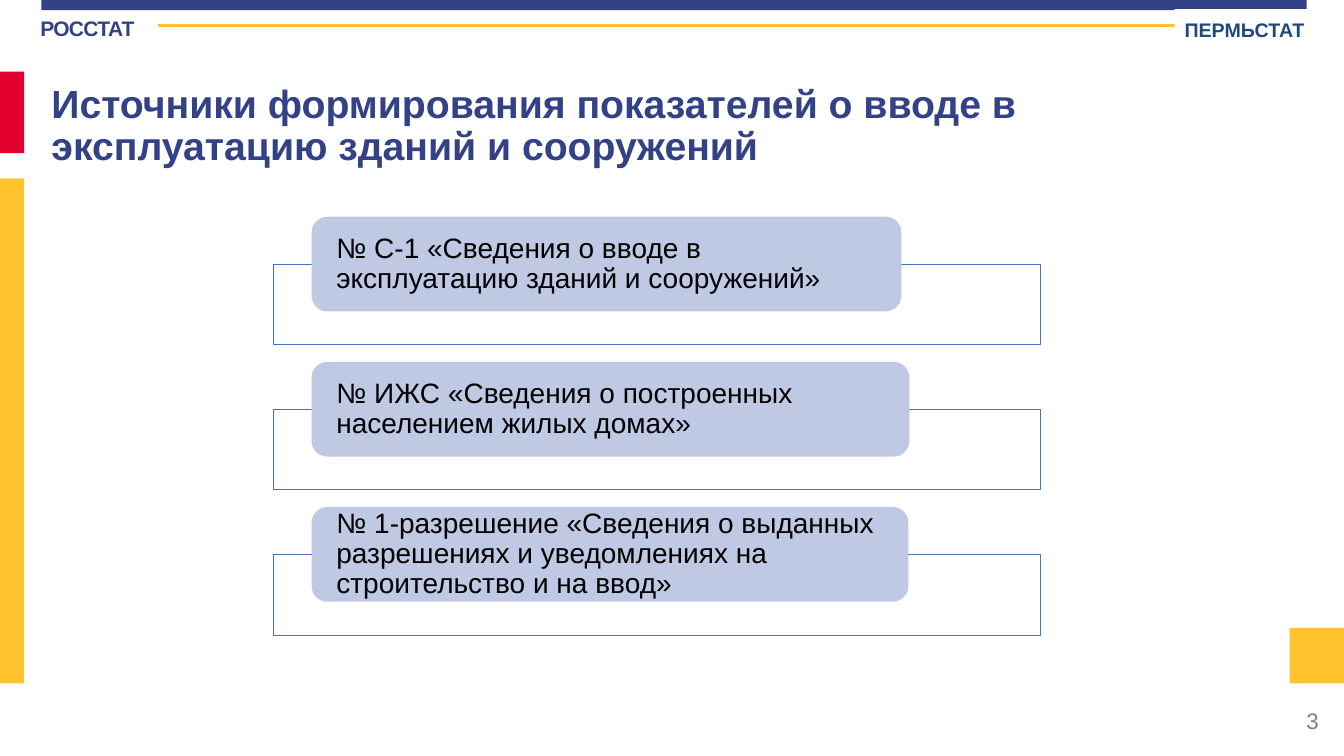
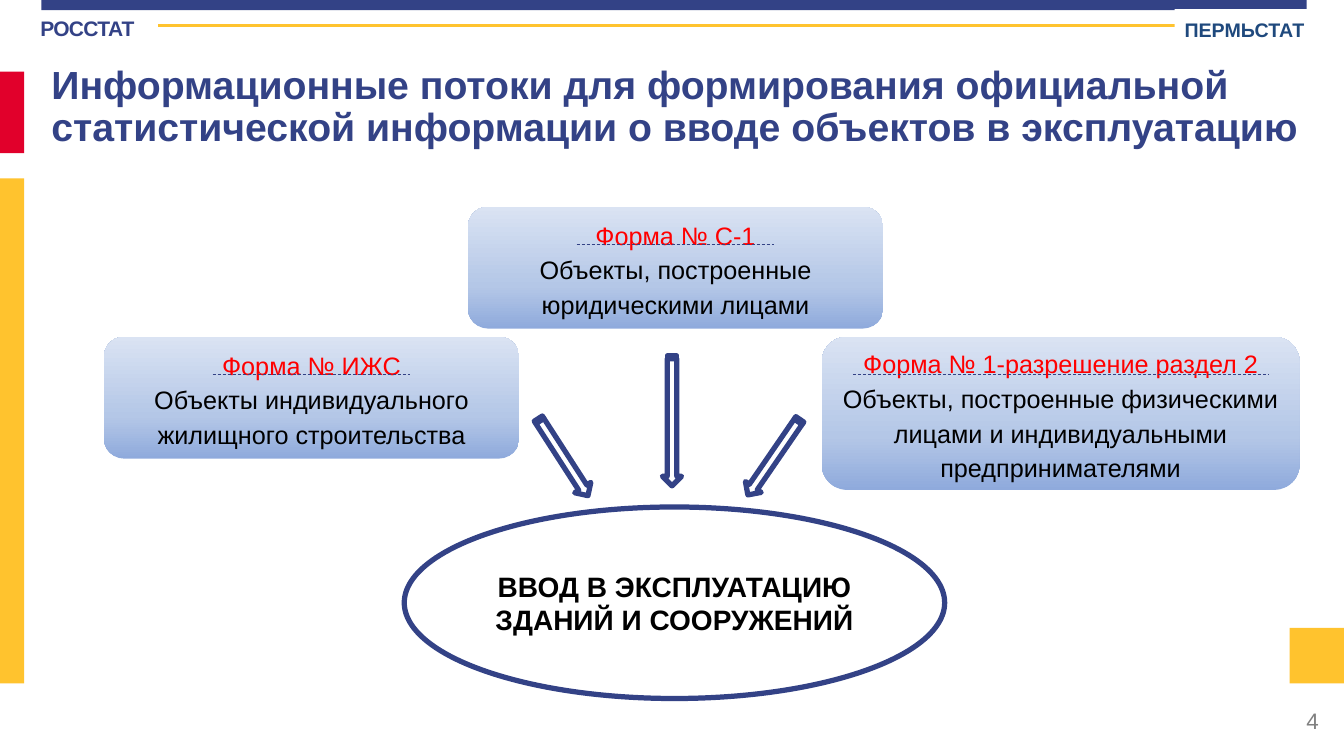
from lxml import etree
from pptx import Presentation
from pptx.dml.color import RGBColor
from pptx.enum.dml import MSO_LINE
from pptx.enum.shapes import MSO_CONNECTOR, MSO_SHAPE
from pptx.enum.text import MSO_ANCHOR, MSO_AUTO_SIZE, PP_ALIGN
from pptx.oxml.ns import qn
from pptx.util import Inches, Pt

RECTANGLE = MSO_SHAPE.RECTANGLE
ROUNDED = MSO_SHAPE.ROUNDED_RECTANGLE
CARD = MSO_SHAPE.FLOWCHART_ALTERNATE_PROCESS
OVAL = MSO_SHAPE.OVAL
ARROW = MSO_SHAPE.STRIPED_RIGHT_ARROW
STRAIGHT = MSO_CONNECTOR.STRAIGHT
DASH = MSO_LINE.DASH
LEFT, CENTER, RIGHT = PP_ALIGN.LEFT, PP_ALIGN.CENTER, PP_ALIGN.RIGHT
TOP, MIDDLE = MSO_ANCHOR.TOP, MSO_ANCHOR.MIDDLE
NO_AUTOFIT = MSO_AUTO_SIZE.NONE

FONT = "Arial"
NAVY = "334286"
GOLD = "FFC32E"
CRIMSON = "E1002B"
WHITE = "FFFFFF"
BLACK = "000000"
RED = "FF0000"
GRAY = "808080"
OFFICE_BLUE = "1F497D"
FRAME_BLUE = "4472C4"
PILL_BLUE = "C0C9E4"
CARD_GRADIENT = [(0, "8FAADC"), (35, "B4C7E7"), (100, "DAE3F3")]
DEFAULT_MARGINS = (0.1, 0.05, 0.1, 0.05)


def color(value):
    return RGBColor.from_string(value)


def add_box(slide, kind, box, fill=None, line=None, width=0.5):
    shape = slide.shapes.add_shape(kind, *map(Inches, box))
    shape.shadow.inherit = False
    if fill:
        shape.fill.solid()
        shape.fill.fore_color.rgb = color(fill)
    if line:
        shape.line.color.rgb = color(line)
        shape.line.width = Pt(width)
    else:
        shape.line.fill.background()
    return shape


def add_line(slide, left, top, right, line, width):
    connector = slide.shapes.add_connector(
        STRAIGHT, Inches(left), Inches(top), Inches(right), Inches(top))
    connector.line.color.rgb = color(line)
    connector.line.width = Pt(width)
    etree.SubElement(connector.element.spPr, qn("a:effectLst"))
    return connector


def write(shape, texts, size, colors, bold=False, align=LEFT, anchor=MIDDLE,
          spacing=1.0, margins=DEFAULT_MARGINS):
    frame = shape.text_frame
    frame.word_wrap = True
    frame.auto_size = NO_AUTOFIT
    frame.vertical_anchor = anchor
    (frame.margin_left, frame.margin_top,
     frame.margin_right, frame.margin_bottom) = map(Inches, margins)
    frame.text = "\n".join(texts)
    for paragraph, text_color in zip(frame.paragraphs, colors):
        paragraph.alignment = align
        paragraph.line_spacing = spacing
        paragraph.space_before = Pt(0)
        font = paragraph.font
        font.name = FONT
        font.size = Pt(size)
        font.bold = bold
        font.color.rgb = color(text_color)


def add_text(slide, box, text, size, text_color, **style):
    shape = slide.shapes.add_textbox(*map(Inches, box))
    write(shape, [text], size, [text_color], **style)
    return shape


def furnish_layout(layout, slide):
    agency = add_text(slide, (0.4, 0.13, 1.15, 0.32), "РОССТАТ", 15, NAVY,
                      bold=True, anchor=TOP, margins=(0, 0.02, 0, 0))
    agency.text_frame.paragraphs[0].runs[0].font.bold = True
    agency.text_frame.paragraphs[0].runs[0]._r.get_or_add_rPr().set("spc", "-50")
    parts = [agency]
    for box, fill in [((0.41, 0, 12.55, 0.1), NAVY),
                      ((0, 0.71, 0.24, 0.81), CRIMSON),
                      ((0, 1.77, 0.24, 5.01), GOLD),
                      ((12.79, 6.23, 0.54, 0.55), GOLD)]:
        parts.append(add_box(slide, RECTANGLE, box, fill))
    parts.append(add_line(slide, 1.57, 0.25, 12.95, GOLD, 2))
    office = add_box(slide, RECTANGLE, (11.65, 0.09, 1.53, 0.34), WHITE)
    write(office, ["ПЕРМЬСТАТ"], 14, [OFFICE_BLUE], bold=True, anchor=TOP, spacing=1.15)
    parts.append(office)
    for part in parts:
        layout.shapes.element.append(part.element)


def add_heading(slide, box, text, number):
    title = slide.shapes.title
    title.left, title.top, title.width, title.height = map(Inches, box)
    write(title, [text], 28, [NAVY], bold=True, anchor=TOP, spacing=0.9)
    add_text(slide, (10.18, 6.95, 3, 0.4), str(number), 16, GRAY, align=RIGHT)


def add_source(slide, left, top, pill_width, text):
    add_box(slide, RECTANGLE, (left, top + 0.47, 7.61, 0.8), WHITE, FRAME_BLUE)
    pill = add_box(slide, ROUNDED, (left + 0.38, top, pill_width, 0.94), PILL_BLUE)
    write(pill, [text], 20, [BLACK], spacing=0.9, margins=(0.2, 0, 0.2, 0))


def add_form_card(slide, box, rule_width, form, content):
    left, top, width, height = box
    card = add_box(slide, CARD, box)
    card.fill.gradient()
    card.fill.gradient_angle = 90
    stops = next(card.element.spPr.iter(qn("a:gsLst")))
    stops.clear()
    for position, value in CARD_GRADIENT:
        stop = etree.SubElement(stops, qn("a:gs"), pos=str(position * 1000))
        etree.SubElement(stop, qn("a:srgbClr"), val=value)
    write(card, [form, content], 18, [RED, BLACK], align=CENTER, spacing=1.15)
    rule_left = left + (width - rule_width) / 2
    rule = add_line(slide, rule_left, top + 0.37, rule_left + rule_width, NAVY, 0.5)
    rule.line.dash_style = DASH


def build_sources(slide):
    add_heading(slide, (0.41, 0.79, 12.3, 1.01),
                "Источники формирования показателей о вводе в эксплуатацию зданий и сооружений", 3)
    sources = [
        (5.85, "№ С-1 «Сведения о вводе в эксплуатацию зданий и сооружений»"),
        (5.93, "№ ИЖС «Сведения о построенных населением жилых домах»"),
        (5.92, "№ 1-разрешение «Сведения о выданных разрешениях и уведомлениях "
               "на строительство и на ввод»"),
    ]
    for index, (pill_width, text) in enumerate(sources):
        add_source(slide, 2.71, 2.15 + index * 1.44, pill_width, text)


def build_flows(slide):
    add_heading(slide, (0.41, 0.6, 12.75, 1.01),
                "Информационные потоки для формирования официальной статистической "
                "информации о вводе объектов в эксплуатацию", 4)
    result = add_box(slide, OVAL, (4.01, 5.03, 5.36, 1.9), WHITE, NAVY, 3.75)
    write(result, ["ВВОД В ЭКСПЛУАТАЦИЮ ЗДАНИЙ И СООРУЖЕНИЙ"], 20, [BLACK],
          bold=True, align=CENTER)
    cards = [
        ((1.03, 3.34, 4.12, 1.21), 1.96, "Форма № ИЖС",
         "Объекты индивидуального жилищного строительства"),
        ((4.64, 2.05, 4.12, 1.21), 1.96, "Форма № С-1",
         "Объекты, построенные юридическими лицами"),
        ((8.15, 3.34, 4.74, 1.52), 4.12, "Форма № 1-разрешение раздел 2",
         "Объекты, построенные физическими лицами и индивидуальными предпринимателями"),
    ]
    for card in cards:
        add_form_card(slide, *card)
    for left, top, length, angle in [(5.13, 4.44, 0.91, 57.2),
                                     (7.22, 4.44, 0.91, 124.5),
                                     (6.02, 4.08, 1.29, 90)]:
        arrow = add_box(slide, ARROW, (left, top, length, 0.19), WHITE, NAVY, 3.75)
        arrow.rotation = angle


def main():
    presentation = Presentation()
    presentation.slide_width = Inches(13.33)
    presentation.slide_height = Inches(7.5)
    layout = presentation.slide_layouts[5]
    slides = [presentation.slides.add_slide(layout) for _ in range(2)]
    furnish_layout(layout, slides[0])
    for build, slide in zip([build_sources, build_flows], slides):
        build(slide)
    presentation.save("out.pptx")


if __name__ == "__main__":
    main()
